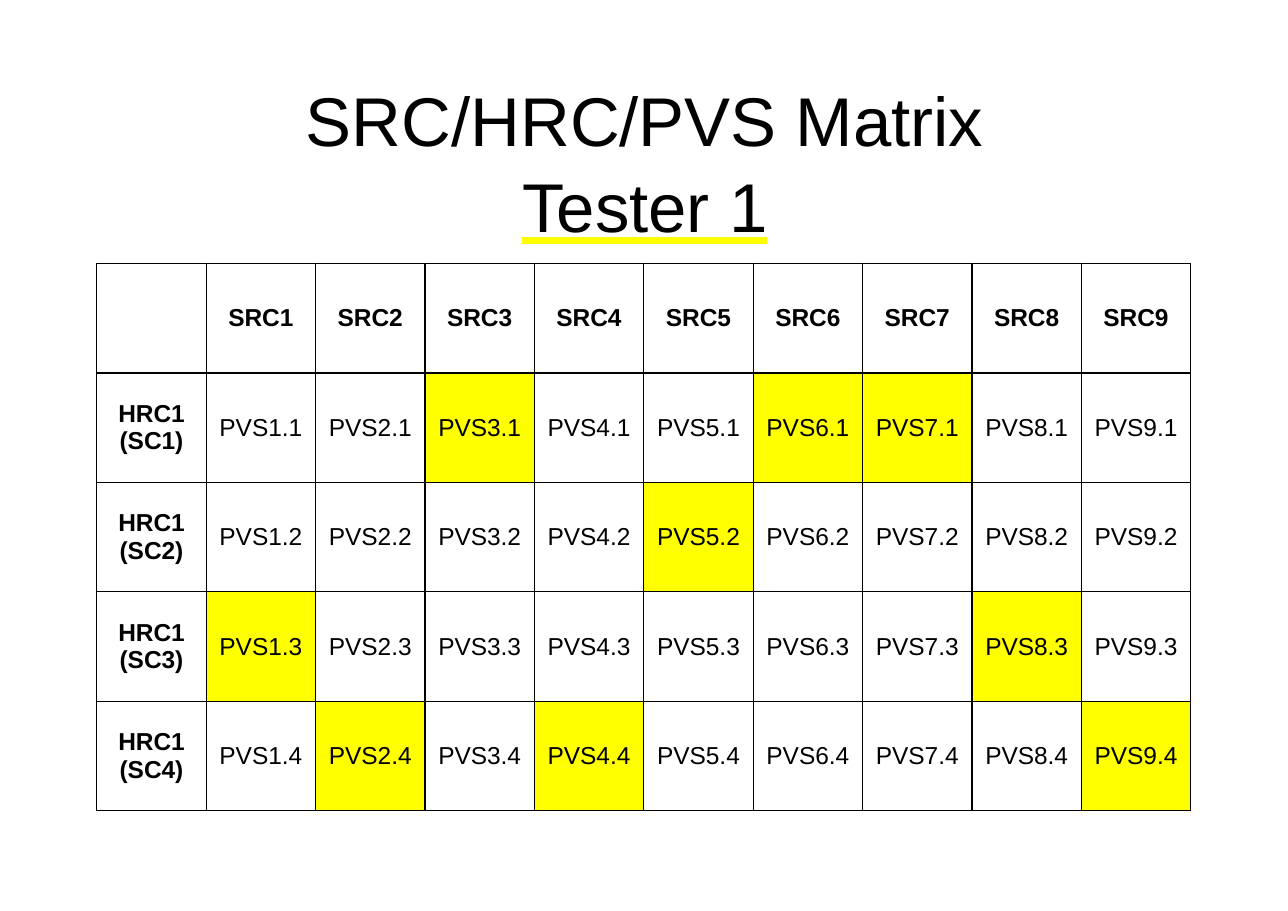
from typing import NamedTuple

from lxml import etree
from pptx import Presentation
from pptx import util as u
from pptx.dml.color import RGBColor
from pptx.enum import text
from pptx.oxml import ns

BLACK = RGBColor(0x00, 0x00, 0x00)
WHITE = RGBColor(0xFF, 0xFF, 0xFF)
YELLOW = RGBColor(0xFF, 0xFF, 0x00)
FONT = "Arial"
LEFT, WIDTH = u.Cm(2.23), u.Cm(25.25)
CELL_SIDE = u.Cm(2.52)
SOURCES, CONDITIONS = 9, 4
# (source, condition) pairs assigned to the tester
ASSIGNED = {(3, 1), (6, 1), (7, 1), (5, 2), (1, 3), (8, 3), (2, 4), (4, 4), (9, 4)}


class MatrixCell(NamedTuple):
    label: str
    bold: bool
    fill: RGBColor


def matrix_cell(source: int, condition: int) -> MatrixCell:
    """Describe a cell; index 0 stands for the heading row or column."""
    if source and condition:
        fill = YELLOW if (source, condition) in ASSIGNED else WHITE
        return MatrixCell(f"PVS{source}.{condition}", False, fill)
    if source:
        return MatrixCell(f"SRC{source}", True, WHITE)
    return MatrixCell(f"HRC1 (SC{condition})" if condition else "", True, WHITE)


def add_solid_fill(parent, color: RGBColor) -> None:
    solid = etree.SubElement(parent, ns.qn("a:solidFill"))
    etree.SubElement(solid, ns.qn("a:srgbClr"), val=str(color))


def add_borders(cell) -> None:
    properties = cell._tc.get_or_add_tcPr()
    for side in ("lnL", "lnR", "lnT", "lnB"):
        line = etree.SubElement(properties, ns.qn(f"a:{side}"), w=str(u.Pt(1)))
        add_solid_fill(line, BLACK)


def style_paragraph(para, size: int, bold: bool) -> None:
    para.alignment = text.PP_ALIGN.CENTER
    para.font.name = FONT
    para.font.size = u.Pt(size)
    para.font.bold = bold
    para.font.color.rgb = BLACK


def add_title(page) -> None:
    box = page.shapes.add_textbox(LEFT, u.Cm(1.95), WIDTH, u.Cm(3.5))
    frame = box.text_frame
    frame.word_wrap = True
    frame.vertical_anchor = text.MSO_ANCHOR.MIDDLE
    frame.margin_left = frame.margin_right = u.Cm(0.15)
    frame.margin_top = frame.margin_bottom = u.Cm(0.15)
    para = frame.paragraphs[0]
    style_paragraph(para, 45, False)
    para.line_spacing = 1.04
    para.add_run().text = "SRC/HRC/PVS Matrix"
    para.add_line_break()
    span = para.add_run()
    span.text = "Tester 1"
    span.font.underline = text.MSO_UNDERLINE.HEAVY_LINE
    underline = etree.SubElement(span.font._element, ns.qn("a:uFill"))
    add_solid_fill(underline, YELLOW)


def add_matrix(page) -> None:
    rows, columns = CONDITIONS + 1, SOURCES + 1
    frame = page.shapes.add_table(
        rows, columns, LEFT, u.Cm(6.07), CELL_SIDE * columns, CELL_SIDE * rows
    )
    table = frame.table
    for column in table.columns:
        column.width = CELL_SIDE
    for condition, row in enumerate(table.rows):
        row.height = CELL_SIDE
        for source, cell in enumerate(row.cells):
            content = matrix_cell(source, condition)
            cell.text = content.label
            cell.vertical_anchor = text.MSO_ANCHOR.MIDDLE
            style_paragraph(cell.text_frame.paragraphs[0], 16, content.bold)
            add_borders(cell)
            cell.fill.solid()
            cell.fill.fore_color.rgb = content.fill


def main() -> None:
    deck = Presentation()
    deck.slide_width, deck.slide_height = u.Cm(29.67), u.Cm(20.98)
    page = deck.slides.add_slide(deck.slide_layouts[6])
    add_title(page)
    add_matrix(page)
    deck.save("out.pptx")


if __name__ == "__main__":
    main()
